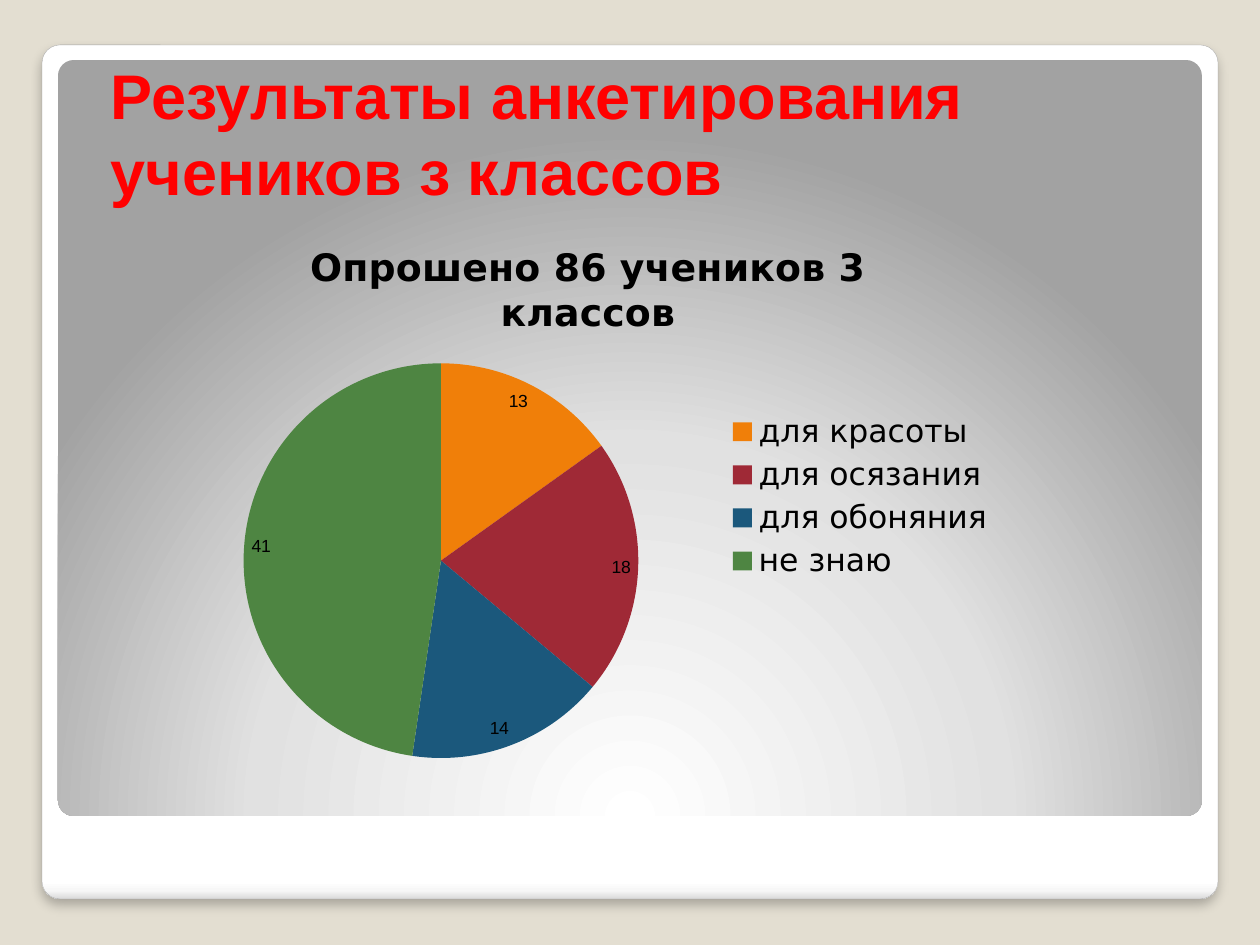
from lxml.etree import SubElement
from pptx import Presentation
from pptx.chart.data import CategoryChartData
from pptx.dml.color import RGBColor
from pptx.enum.chart import XL_CHART_TYPE, XL_LABEL_POSITION, XL_LEGEND_POSITION
from pptx.enum.shapes import MSO_SHAPE
from pptx.enum.text import MSO_ANCHOR, PP_ALIGN
from pptx.oxml import parse_xml
from pptx.oxml.ns import nsdecls, qn
from pptx.util import Pt

EMU_PER_PX = 914400 / 126
COLORS = {
    "background": "E3DED1",
    "outline": "A4A4A4",
    "title": "FF0000",
    "text": "000000",
}
ANSWERS = [
    ("для красоты", 13, "F07F09"),
    ("для осязания", 18, "9F2936"),
    ("для обоняния", 14, "1B587C"),
    ("не знаю", 41, "4E8542"),
]
CARD_STOPS = [(0, "FFFFFF"), (98, "FFFFFF"), (99, "F7F7F7"), (100, "DADADA")]
PANEL_STOPS = [(0, "FFFFFF"), (55, "E1E1E1"), (100, "A2A2A2")]
LINEAR_DOWN = '<a:lin ang="5400000" scaled="0"/>'
GLOW_FROM_BELOW = (
    '<a:path path="circle">'
    '<a:fillToRect l="50000" t="175000" r="50000" b="-75000"/></a:path>'
)


def px(length):
    return round(length * EMU_PER_PX)


def color(name):
    return RGBColor.from_string(COLORS[name])


def style_font(font, name, size, bold=False, color_name="text"):
    font.name = name
    font.size = Pt(size)
    font.bold = bold
    font.color.rgb = color(color_name)


def add_rounded_box(slide, box, stops, direction):
    shape = slide.shapes.add_shape(MSO_SHAPE.ROUNDED_RECTANGLE, *map(px, box))
    shape.adjustments[0] = 0.021
    shape.shadow.inherit = False
    shape.line.fill.background()
    shape.fill.background()
    stop_list = "".join(
        f'<a:gs pos="{position * 1000}"><a:srgbClr val="{value}"/></a:gs>'
        for position, value in stops
    )
    gradient = parse_xml(
        f'<a:gradFill {nsdecls("a")} rotWithShape="1">'
        f"<a:gsLst>{stop_list}</a:gsLst>{direction}</a:gradFill>"
    )
    properties = shape.element.spPr
    properties.replace(properties.find(qn("a:noFill")), gradient)
    return shape


def add_card(slide, box):
    card = add_rounded_box(slide, box, CARD_STOPS, LINEAR_DOWN)
    card.line.color.rgb = color("outline")
    card.line.width = Pt(0.16)
    effects = card.element.spPr.find(qn("a:effectLst"))
    shadow = SubElement(
        effects, qn("a:outerShdw"), blurRad=str(Pt(6)), dist=str(Pt(4)),
        dir="5400000", algn="t", rotWithShape="0",
    )
    shadow_color = SubElement(shadow, qn("a:srgbClr"), val=COLORS["text"])
    SubElement(shadow_color, qn("a:alpha"), val="25000")


def place_title(slide, box):
    title = slide.shapes.title
    title.left, title.top, title.width, title.height = map(px, box)
    frame = title.text_frame
    frame.text = "Результаты анкетирования\vучеников з классов"
    frame.word_wrap = True
    frame.vertical_anchor = MSO_ANCHOR.BOTTOM
    paragraph = frame.paragraphs[0]
    paragraph.alignment = PP_ALIGN.LEFT
    for run in paragraph.runs:
        style_font(run.font, "Arial", 36, True, "title")
    slide.shapes._spTree.append(title.element)


def add_survey_chart(slide, box):
    heading = "Опрошено 86 учеников 3 классов"
    data = CategoryChartData()
    data.categories = [answer for answer, _, _ in ANSWERS]
    data.add_series(heading, [count for _, count, _ in ANSWERS])
    chart = slide.shapes.add_chart(XL_CHART_TYPE.PIE, *map(px, box), data).chart
    style_font(chart.font, "DejaVu Sans", 18)

    chart.has_title = True
    chart.chart_title.text_frame.text = heading
    title_run = chart.chart_title.text_frame.paragraphs[0].runs[0]
    style_font(title_run.font, "DejaVu Sans", 21.6, True)
    chart.chart_title.include_in_layout = False

    chart.has_legend = True
    chart.legend.position = XL_LEGEND_POSITION.RIGHT
    chart.legend.include_in_layout = False
    style_font(chart.legend.font, "DejaVu Sans", 18)

    plot = chart.plots[0]
    plot.vary_by_categories = True
    plot.has_data_labels = True
    labels = plot.data_labels
    labels.show_value = True
    labels.show_percentage = False
    labels.position = XL_LABEL_POSITION.INSIDE_END
    style_font(labels.font, "Arial", 10)
    for index, (_, _, fill) in enumerate(ANSWERS):
        point_format = plot.series[0].points[index].format
        point_format.fill.solid()
        point_format.fill.fore_color.rgb = RGBColor.from_string(fill)
        point_format.line.fill.background()

    plot_area = chart._chartSpace.chart.plotArea
    for layout in plot_area.findall(qn("c:layout")):
        plot_area.remove(layout)
    plot_area.insert(0, parse_xml(
        f'<c:layout {nsdecls("c")}><c:manualLayout>'
        '<c:layoutTarget val="inner"/><c:xMode val="edge"/><c:yMode val="edge"/>'
        '<c:x val="0.09"/><c:y val="0.26"/><c:w val="0.47"/><c:h val="0.71"/>'
        "</c:manualLayout></c:layout>"
    ))


def main():
    presentation = Presentation()
    presentation.slide_width = px(1260)
    presentation.slide_height = px(945)
    slide = presentation.slides.add_slide(presentation.slide_layouts[5])
    slide.background.fill.solid()
    slide.background.fill.fore_color.rgb = color("background")
    add_card(slide, (42, 45, 1176, 854))
    add_rounded_box(slide, (58, 60, 1144, 756), PANEL_STOPS, GLOW_FROM_BELOW)
    place_title(slide, (98, 69, 1128, 145))
    add_survey_chart(slide, (168, 217, 840, 559))
    presentation.save("out.pptx")


if __name__ == "__main__":
    main()
